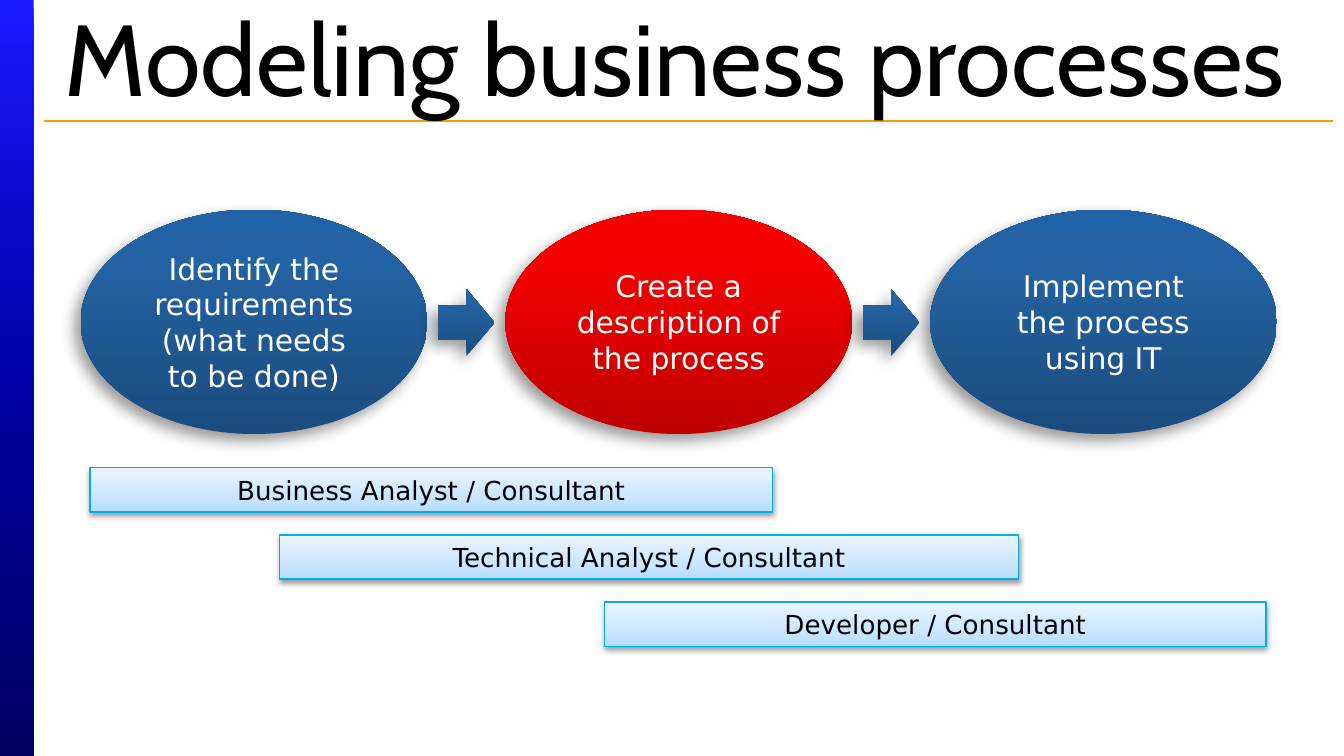
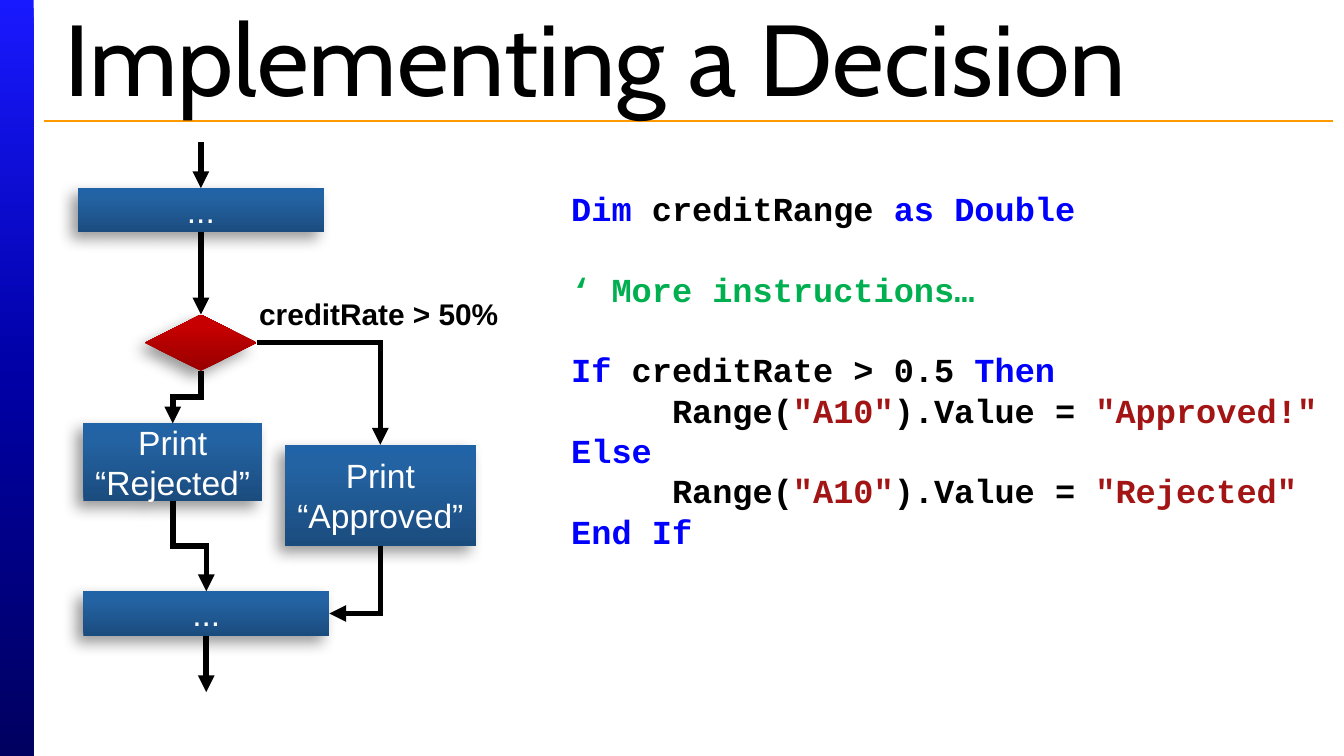
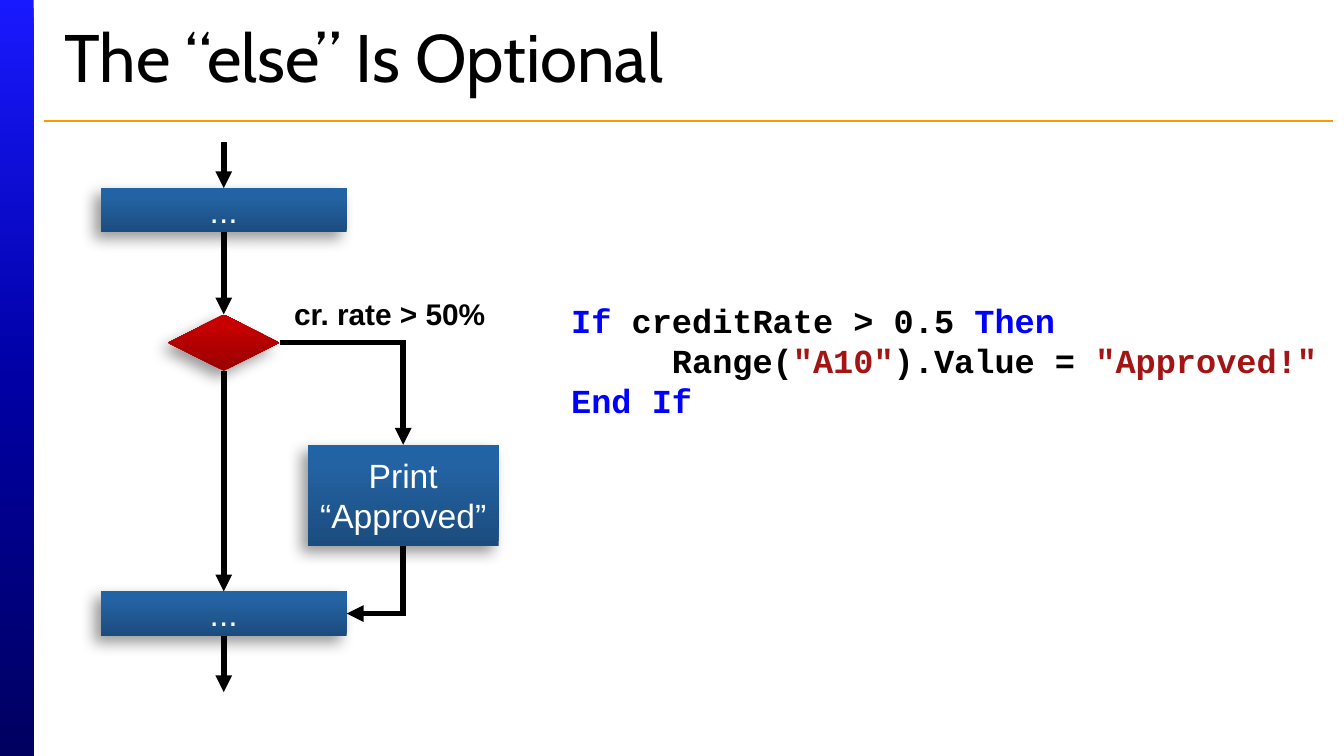
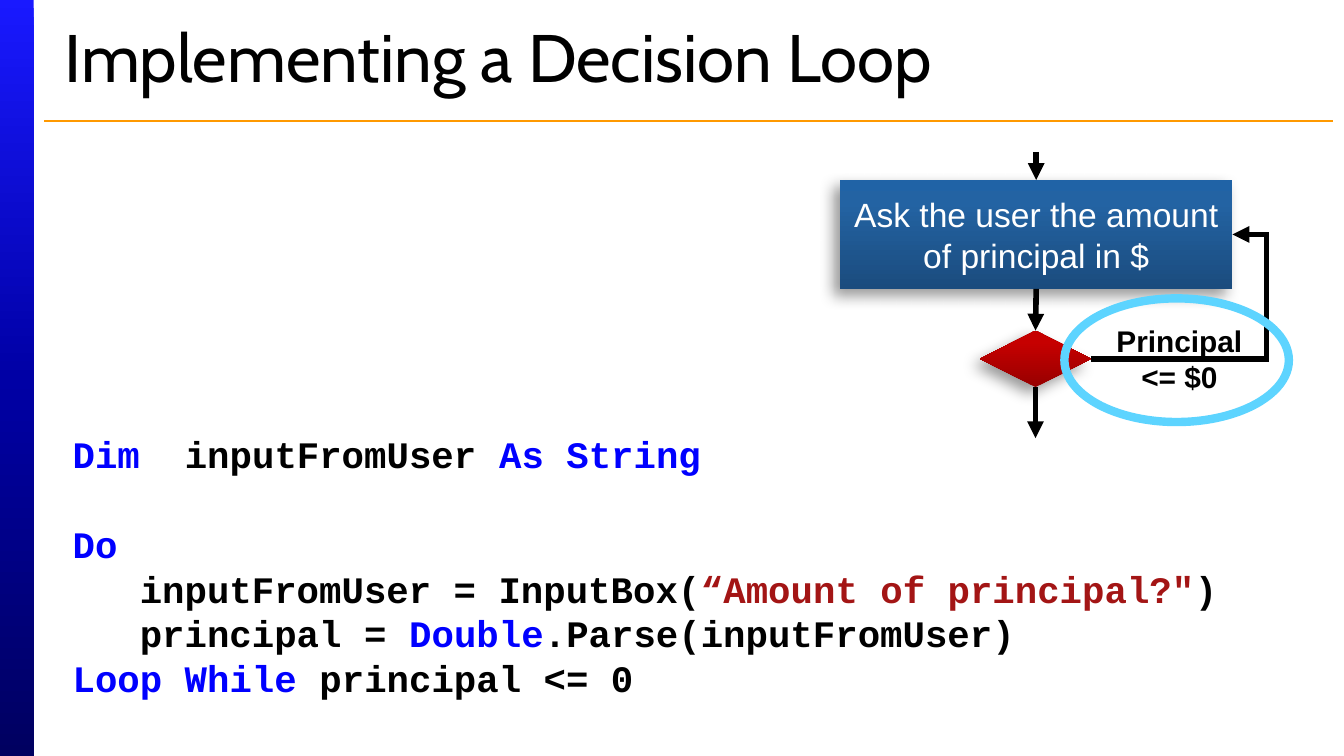
from dataclasses import dataclass
from typing import Optional

from lxml.etree import SubElement
from pptx import Presentation
from pptx.dml.color import RGBColor
from pptx.enum.shapes import MSO_CONNECTOR, MSO_SHAPE
from pptx.enum.text import MSO_ANCHOR, MSO_AUTO_SIZE, PP_ALIGN
from pptx.oxml.ns import qn
from pptx.util import Inches, Pt

WIDE = 10
HIGH = WIDE * 9 / 16
BLACK, WHITE = "000000", "FFFFFF"
KEY, NOTE, QUOTE = "0000FF", "00B050", "A31515"
ORANGE, CYAN, SKY = "FF9900", "00ACEB", "5DD4FF"
TOP, LEFT, BOTTOM, RIGHT = range(4)


@dataclass(frozen=True)
class Fade:
    stops: tuple
    angle: int = 270


@dataclass(frozen=True)
class Shade:
    alpha: int
    blur: float
    dist: float
    angle: int


@dataclass(frozen=True)
class Line:
    runs: tuple
    indent: float = 0
    gap: float = 0


@dataclass(frozen=True)
class Stage:
    text: str
    fade: Fade


@dataclass(frozen=True)
class Role:
    text: str
    left: float
    width: float


BAND = Fade(((0, "1919FF"), (50, "0000A5"), (100, "000060")), 90)
BLUE = Fade(((0, "1B4C7E"), (80, "2363A3"), (100, "2063A6")))
RED = Fade(((0, "BE0000"), (80, "F70000"), (100, "F80000")))
DARK = Fade(((0, "980000"), (80, "C60000"), (100, "C70000")))
PALE = Fade(((0, "B5DDFF"), (35, "CBE6FF"), (100, "EBF5FF")))
DEEP = Shade(40, 8, 5, 135)
SOFT = Shade(38, 3.1, 1.6, 90)

STAGES = (
    Stage("Identify the requirements (what needs to be done)", BLUE),
    Stage("Create a description of the process", RED),
    Stage("Implement the process\nusing IT", BLUE),
)
ROLES = (
    Role("Business Analyst / Consultant", 0.67, 5.08),
    Role("Technical Analyst / Consultant", 2.08, 5.5),
    Role("Developer / Consultant", 4.5, 4.92),
)


def assign(text: str, gap: float = 0) -> Line:
    runs = (("Range(", BLACK), ('"A10"', QUOTE), (").Value = ", BLACK), (f'"{text}"', QUOTE))
    return Line(runs, 0.75, gap)


def check(gap: float = 0) -> Line:
    return Line((("If", KEY), (" creditRate > 0.5 ", BLACK), ("Then", KEY)), gap=gap)


FINISH = Line((("End If", KEY),))
CHOICE = (
    Line((("Dim ", KEY), ("creditRange", BLACK), (" as Double", KEY))),
    Line((("‘ More instructions…", NOTE),), gap=21.6),
    check(21.6),
    assign("Approved!"),
    Line((("Else", KEY),)),
    assign("Rejected"),
    FINISH,
)
SHORT = (check(), assign("Approved!"), FINISH)
LOOP = (
    Line((("Dim ", KEY), (" inputFromUser ", BLACK), ("As String", KEY))),
    Line((("Do", KEY),), gap=24),
    Line((("inputFromUser = InputBox(", BLACK), ("“Amount of principal?\"", QUOTE), (")", BLACK)), 0.5),
    Line((("principal = ", BLACK), ("Double", KEY), (".Parse(inputFromUser)", BLACK)), 0.5),
    Line((("Loop While", KEY), (" principal <= 0", BLACK))),
)


def rgb(code: str) -> RGBColor:
    return RGBColor.from_string(code)


def write(frame, lines, *, size: float, font: str = "Arial", color: str = BLACK,
          bold: bool = False, align=PP_ALIGN.LEFT, anchor=MSO_ANCHOR.TOP,
          inset: Optional[float] = None, grow: bool = False) -> None:
    if isinstance(lines, str):
        lines = (Line(((lines, color),)),)
    frame.word_wrap = True
    frame.auto_size = MSO_AUTO_SIZE.SHAPE_TO_FIT_TEXT if grow else MSO_AUTO_SIZE.NONE
    frame.vertical_anchor = anchor
    if inset is not None:
        frame.margin_left = frame.margin_right = Inches(inset)
        frame.margin_top = frame.margin_bottom = Inches(inset)
    for at, line in enumerate(lines):
        para = frame.add_paragraph() if at else frame.paragraphs[0]
        para.alignment = align
        if line.gap:
            para.space_before = Pt(line.gap)
        if line.indent:
            props = para._p.get_or_add_pPr()
            props.set("marL", str(Inches(line.indent)))
            props.set("indent", "0")
        for text, tint in line.runs:
            for part, piece in enumerate(text.split("\n")):
                if part:
                    para.add_line_break()
                run = para.add_run()
                run.text = piece
                run.font.name = font
                run.font.size = Pt(size)
                run.font.bold = bold
                run.font.color.rgb = rgb(tint)


def tone(parent, tag: str, code: str):
    node = SubElement(parent, qn(tag))
    return SubElement(node, qn("a:srgbClr"), val=code)


def paint(shape, fade: Fade) -> None:
    shape.fill.gradient()
    shape.fill.gradient_angle = 360 - fade.angle
    stops = shape.element.spPr.find(qn("a:gradFill")).find(qn("a:gsLst"))
    for old in list(stops):
        stops.remove(old)
    for place, code in fade.stops:
        tone(stops, "a:gs", code).getparent().set("pos", str(place * 1000))


def cast(shape, shade: Shade) -> None:
    effects = shape.element.spPr.find(qn("a:effectLst"))
    color = tone(effects, "a:outerShdw", BLACK)
    SubElement(color, qn("a:alpha"), val=str(shade.alpha * 1000))
    outer = color.getparent()
    outer.set("blurRad", str(Pt(shade.blur)))
    outer.set("dist", str(Pt(shade.dist)))
    outer.set("dir", str(shade.angle * 60000))
    outer.set("rotWithShape", "0")


def draw(slide, kind, left: float, top: float, width: float, height: float, *,
         fade: Optional[Fade] = None, shade: Optional[Shade] = None,
         edge: Optional[str] = None, weight: float = 0.75):
    shape = slide.shapes.add_shape(kind, Inches(left), Inches(top), Inches(width), Inches(height))
    shape.shadow.inherit = False
    if fade:
        paint(shape, fade)
    else:
        shape.fill.background()
    if edge:
        shape.line.color.rgb = rgb(edge)
        shape.line.width = Pt(weight)
    else:
        shape.line.fill.background()
    if shade:
        cast(shape, shade)
    return shape


def label(slide, lines, left: float, top: float, width: float, height: float, **form) -> None:
    box = slide.shapes.add_textbox(Inches(left), Inches(top), Inches(width), Inches(height))
    write(box.text_frame, lines, bold=True, grow=True, **form)


def code(slide, lines, left: float, top: float, width: float, height: float, size: float) -> None:
    label(slide, lines, left, top, width, height, size=size, font="Courier New", inset=0)


def step(slide, text: str, left: float, top: float, width: float, height: float):
    shape = draw(slide, MSO_SHAPE.FLOWCHART_PROCESS, left, top, width, height, fade=BLUE, shade=DEEP)
    write(shape.text_frame, text, size=18, color=WHITE, align=PP_ALIGN.CENTER,
          anchor=MSO_ANCHOR.MIDDLE, inset=0.05)
    return shape


def fork(slide, left: float, top: float):
    return draw(slide, MSO_SHAPE.FLOWCHART_DECISION, left, top, 0.83, 0.42, fade=DARK, shade=DEEP)


def side(shape, site: int) -> tuple:
    across = {LEFT: 0, RIGHT: shape.width}.get(site, shape.width // 2)
    down = {TOP: 0, BOTTOM: shape.height}.get(site, shape.height // 2)
    return shape.left + across, shape.top + down


def wire(slide, kind, start: tuple, end: tuple, *, color: str = BLACK,
         weight: float = 3, arrow: bool = True):
    line = slide.shapes.add_connector(kind, *start, *end)
    line.line.color.rgb = rgb(color)
    line.line.width = Pt(weight)
    props = line.element.spPr
    if arrow:
        stroke = props.find(qn("a:ln"))
        SubElement(stroke, qn("a:miter"), lim="800000")
        SubElement(stroke, qn("a:tailEnd"), type="triangle")
    SubElement(props, qn("a:effectLst"))
    return line


def enter(slide, shape, top: float) -> None:
    x, y = side(shape, TOP)
    wire(slide, MSO_CONNECTOR.STRAIGHT, (x, Inches(top)), (x, y)).end_connect(shape, TOP)


def leave(slide, shape, bottom: float) -> None:
    x, y = side(shape, BOTTOM)
    wire(slide, MSO_CONNECTOR.STRAIGHT, (x, y), (x, Inches(bottom))).begin_connect(shape, BOTTOM)


def drop(slide, upper, lower) -> None:
    line = wire(slide, MSO_CONNECTOR.STRAIGHT, side(upper, BOTTOM), side(lower, TOP))
    line.begin_connect(upper, BOTTOM)
    line.end_connect(lower, TOP)


def bend(slide, first, exit: int, last, entry: int, adjust: Optional[float] = None) -> None:
    start, end = side(first, exit), side(last, entry)
    line = wire(slide, MSO_CONNECTOR.ELBOW, start, end)
    line.begin_connect(first, exit)
    line.end_connect(last, entry)
    wide, high = end[0] - start[0], end[1] - start[1]
    upright = exit in (TOP, BOTTOM)
    line.width, line.height = (abs(high), abs(wide)) if upright else (abs(wide), abs(high))
    line.left = (start[0] + end[0] - line.width) // 2
    line.top = (start[1] + end[1] - line.height) // 2
    line.rotation = 90 if upright else 0
    frame = line.element.spPr.find(qn("a:xfrm"))
    for flip in ("flipH", "flipV"):
        frame.attrib.pop(flip, None)
    if (upright and wide > 0) or (not upright and high < 0):
        frame.set("flipV", "1")
    shape = line.element.spPr.find(qn("a:prstGeom"))
    if exit % 2 != entry % 2:
        shape.set("prst", "bentConnector2")
    if adjust is not None:
        guides = shape.find(qn("a:avLst"))
        if guides is None:
            guides = SubElement(shape, qn("a:avLst"))
        SubElement(guides, qn("a:gd"), name="adj1", fmla=f"val {round(adjust * 100000)}")


def dress(slide, layout) -> None:
    band = draw(slide, MSO_SHAPE.RECTANGLE, 0, 0, 0.25, HIGH, fade=BAND)
    rule = wire(slide, MSO_CONNECTOR.STRAIGHT, (Inches(0.33), Inches(0.9)),
                (Inches(9.92), Inches(0.9)), color=ORANGE, weight=0.75, arrow=False)
    for at, part in enumerate((band, rule)):
        layout.shapes.element.insert(2 + at, part.element)


def start(deck, text: str, size: float):
    slide = deck.slides.add_slide(deck.slide_layouts[5])
    title = slide.shapes.title
    title.left, title.top = Inches(0.38), Inches(0.15)
    title.width, title.height = Inches(9.58), Inches(0.53)
    write(title.text_frame, text, size=size, font="Cabin", anchor=MSO_ANCHOR.MIDDLE)
    return slide


def stages(deck):
    slide = start(deck, "Modeling business processes", 54)
    pitch = 3.16
    form = dict(font="DejaVu Sans", align=PP_ALIGN.CENTER, anchor=MSO_ANCHOR.MIDDLE)
    for at, stage in enumerate(STAGES):
        oval = draw(slide, MSO_SHAPE.OVAL, 0.6 + at * pitch, 1.56, 2.58, 1.67,
                    fade=stage.fade, shade=DEEP)
        write(oval.text_frame, stage.text, size=16, color=WHITE, **form)
    for at in range(len(STAGES) - 1):
        draw(slide, MSO_SHAPE.RIGHT_ARROW, 3.26 + at * pitch, 2.15, 0.42, 0.5, fade=BLUE, shade=DEEP)
    for at, role in enumerate(ROLES):
        bar = draw(slide, MSO_SHAPE.RECTANGLE, role.left, 3.48 + at * 0.5, role.width, 0.33,
                   fade=PALE, shade=SOFT, edge=CYAN)
        write(bar.text_frame, role.text, size=14, **form)
    return slide


def branch(slide, left: float, last: float, reject: bool) -> None:
    first = step(slide, "...", left, 1.4, 1.83, 0.33)
    test = fork(slide, left + 0.5, 2.34)
    yes = step(slide, "Print “Approved”", left + 1.54, 3.31, 1.42, 0.75)
    final = step(slide, "...", last, 4.4, 1.83, 0.33)
    enter(slide, first, 1.06)
    drop(slide, first, test)
    bend(slide, test, RIGHT, yes, TOP)
    if reject:
        no = step(slide, "Print “Rejected”", left + 0.04, 3.15, 1.33, 0.58)
        bend(slide, test, BOTTOM, no, TOP)
        bend(slide, no, BOTTOM, final, TOP)
    else:
        drop(slide, test, final)
    bend(slide, yes, BOTTOM, final, RIGHT)
    leave(slide, final, 5.15)


def choice(deck) -> None:
    slide = start(deck, "Implementing a Decision", 54)
    branch(slide, 0.58, 0.62, True)
    label(slide, "creditRate > 50%", 1.83, 2.15, 2.17, 0.37, size=16)
    code(slide, CHOICE, 4.25, 1.4, 5.58, 3.03, 18)


def option(deck) -> None:
    slide = start(deck, "The “else” Is Optional", 36)
    branch(slide, 0.75, 0.75, False)
    label(slide, "cr. rate > 50%", 2.09, 2.15, 1.7, 0.37, size=16)
    code(slide, SHORT, 4.25, 2.23, 5.67, 1.51, 18)


def loop(deck) -> None:
    slide = start(deck, "Implementing a Decision Loop", 36)
    code(slide, LOOP, 0.54, 3.21, 9.21, 2.36, 20)
    ask = step(slide, "Ask the user the amount of principal in $", 6.25, 1.34, 2.92, 0.81)
    test = fork(slide, 7.29, 2.46)
    bend(slide, test, RIGHT, ask, RIGHT, 1.24)
    drop(slide, ask, test)
    leave(slide, test, 3.26)
    label(slide, "Principal <= $0", 8.05, 2.35, 1.45, 0.64, size=16, align=PP_ALIGN.CENTER)
    enter(slide, ask, 1.13)
    draw(slide, MSO_SHAPE.OVAL, 7.92, 2.22, 1.67, 0.92, edge=SKY, weight=4.5)


def main() -> None:
    deck = Presentation()
    deck.slide_width, deck.slide_height = Inches(WIDE), Inches(HIGH)
    dress(stages(deck), deck.slide_layouts[5])
    choice(deck)
    option(deck)
    loop(deck)
    deck.save("out.pptx")


if __name__ == "__main__":
    main()
